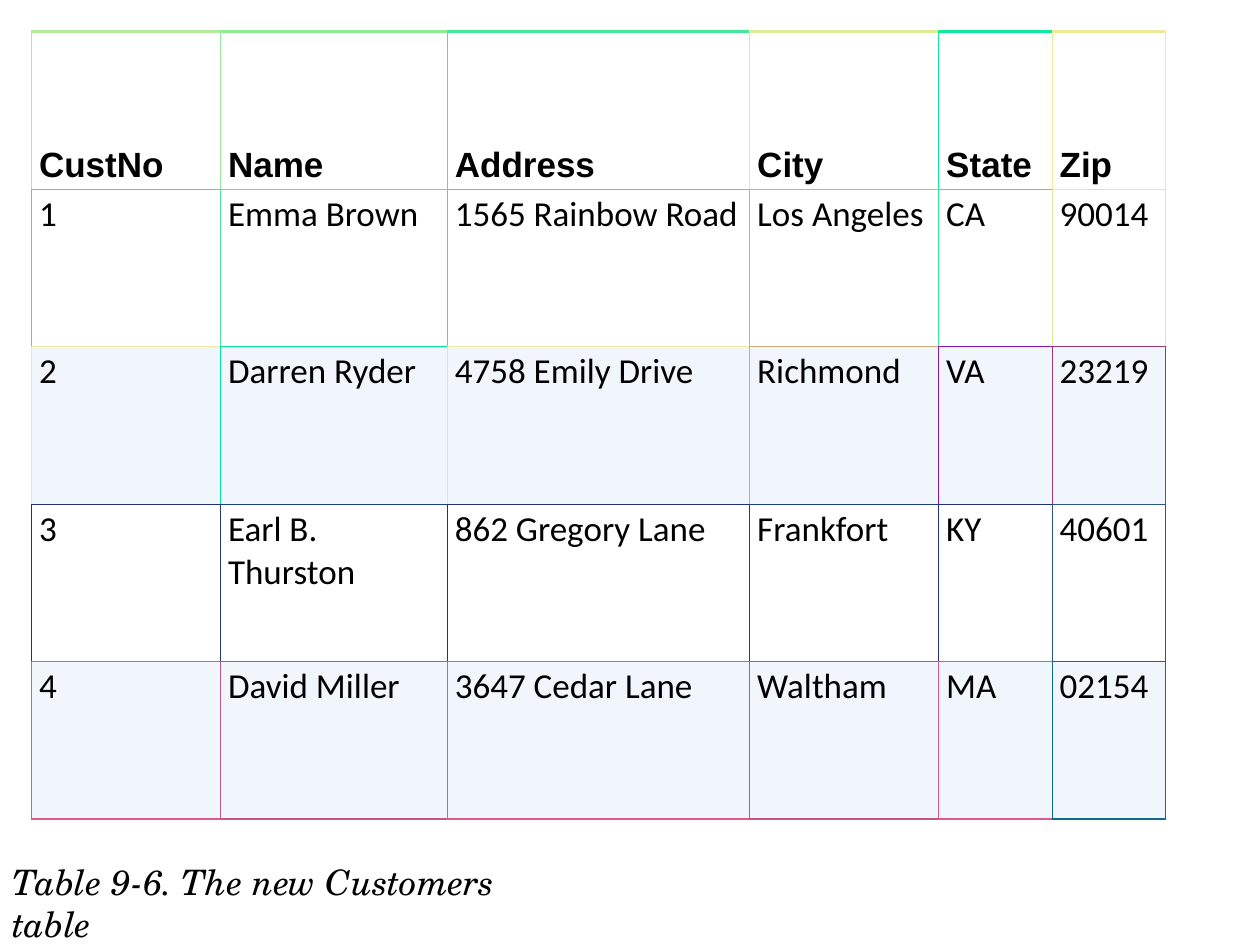
from lxml import etree
from pptx import Presentation
from pptx import util as u
from pptx.dml.color import RGBColor
from pptx.enum import text
from pptx.oxml.ns import qn

COLORS = {"ink": "000000", "band": "F1F6FC"}

COLUMN_WIDTHS = [1.5, 1.8, 2.4, 1.5, 0.9, 0.9]
CUSTOMERS = [
    ["CustNo", "Name", "Address", "City", "State", "Zip"],
    ["1", "Emma Brown", "1565 Rainbow Road", "Los Angeles", "CA", "90014"],
    ["2", "Darren Ryder", "4758 Emily Drive", "Richmond", "VA", "23219"],
    ["3", "Earl B. Thurston", "862 Gregory Lane", "Frankfort", "KY", "40601"],
    ["4", "David Miller", "3647 Cedar Lane", "Waltham", "MA", "02154"],
]
# Each cell's left and top edge; the right and bottom come from its neighbours
EDGE_COLORS = [
    ["B0EA9A", "90EA9A", "40EA9A", "E0E99A", "10EA9A", "F0E99A"],
    ["30E99A", "50E99A", "30E99A", "50E99A", "30E99A", "E0E89A"],
    ["F0E89A", "00E99A", "F0E89A", "D0AC78", "9016B7", "A03579"],
    ["20317E", "203E79", "20317E", "203E79", "20317E", "30538B"],
    ["E0588B", "C0558B", "E0588B", "C0558B", "E0588B", "106B8E"],
]
HEADER_FONT = {"name": "Arial", "size": u.Pt(20), "bold": True}
BODY_FONT = {"name": "Calibri", "size": u.Pt(20), "bold": False}
CAPTION_FONT = {"name": "TeX Gyre Schola", "size": u.Pt(20), "italic": True}
CELL_FORMAT = {
    "margin_left": u.Inches(0.06), "margin_right": u.Inches(0.06),
    "margin_top": u.Inches(0.03), "margin_bottom": u.Inches(0.03),
}


def apply_format(target, values):
    for name, value in values.items():
        setattr(target, name, value)


def write_text(frame, content, font_format):
    run = frame.paragraphs[0].add_run()
    run.text = content
    apply_format(run.font, font_format)
    run.font.color.rgb = RGBColor.from_string(COLORS["ink"])


def set_borders(cell, borders):
    """Put the edge lines ahead of the cell's fill, as the schema orders them."""
    properties = cell._tc.get_or_add_tcPr()
    for index, (tag, (color, width)) in enumerate(borders.items()):
        line = etree.Element(qn(f"a:{tag}"), w=str(u.Pt(width)))
        fill = etree.SubElement(line, qn("a:solidFill"))
        etree.SubElement(fill, qn("a:srgbClr"), val=color)
        properties.insert(index, line)


def cell_borders(row, column):
    last_row, last_column = len(CUSTOMERS) - 1, len(COLUMN_WIDTHS) - 1
    own = EDGE_COLORS[row][column]
    right = EDGE_COLORS[row][min(column + 1, last_column)]
    below = EDGE_COLORS[min(row + 1, last_row)][column]
    return {
        "lnL": (own, 0.5),
        "lnR": (right, 0.5),
        "lnT": (own, 1.5 if row == 0 else 0.5),
        "lnB": (below, 0.75 if row == last_row else 0.5),
    }


def add_customer_table(slide, left, top, width, height):
    shape = slide.shapes.add_table(len(CUSTOMERS), len(COLUMN_WIDTHS),
                                   left, top, width, height)
    table = shape.table
    table.horz_banding = False
    for column, share in zip(table.columns, COLUMN_WIDTHS):
        column.width = int(width * share / sum(COLUMN_WIDTHS))

    for row, values in enumerate(CUSTOMERS):
        for column, value in enumerate(values):
            cell = table.cell(row, column)
            header = row == 0
            apply_format(cell, CELL_FORMAT)
            cell.vertical_anchor = (text.MSO_ANCHOR.BOTTOM if header
                                    else text.MSO_ANCHOR.TOP)
            write_text(cell.text_frame, value, HEADER_FONT if header else BODY_FONT)
            # Tint every second customer
            if row and row % 2 == 0:
                cell.fill.solid()
                cell.fill.fore_color.rgb = RGBColor.from_string(COLORS["band"])
            else:
                cell.fill.background()
            set_borders(cell, cell_borders(row, column))


def add_caption(slide, left, top, width, height):
    frame = slide.shapes.add_textbox(left, top, width, height).text_frame
    apply_format(frame, {"word_wrap": True, "vertical_anchor": text.MSO_ANCHOR.TOP})
    write_text(frame, "Table 9-6. The new Customers table", CAPTION_FONT)


def main():
    presentation = Presentation()
    presentation.slide_width, presentation.slide_height = u.Inches(10), u.Inches(7.5)
    slide = presentation.slides.add_slide(presentation.slide_layouts[6])
    add_customer_table(slide, u.Inches(0.25), u.Inches(0.25), u.Inches(9), u.Inches(6.25))
    add_caption(slide, 0, u.Inches(6.78), u.Inches(4.71), u.Inches(0.8))
    presentation.save("out.pptx")


if __name__ == "__main__":
    main()
